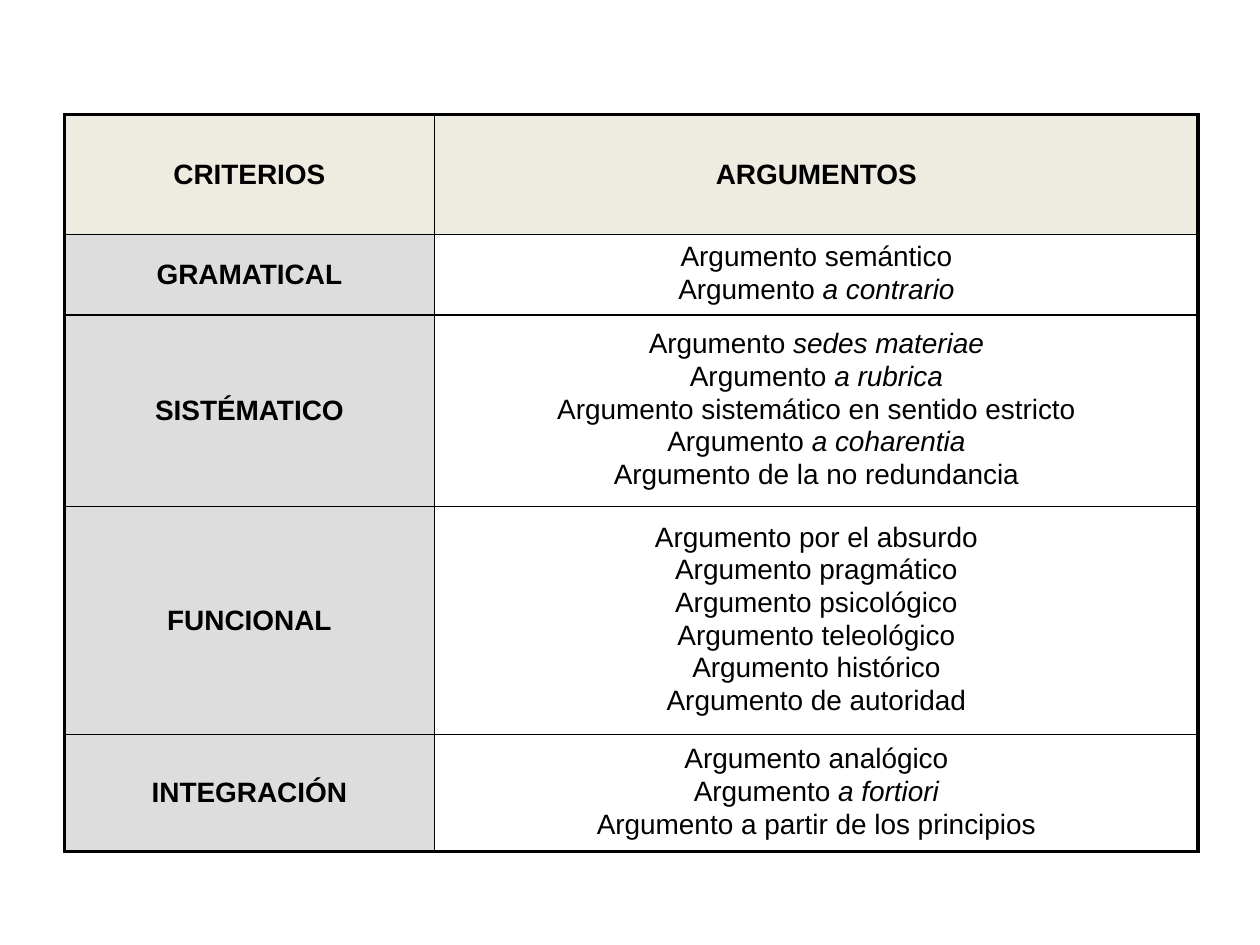
from dataclasses import dataclass

from lxml import etree
from pptx import Presentation
from pptx.dml.color import RGBColor
from pptx.enum.text import MSO_ANCHOR, PP_ALIGN
from pptx.oxml.ns import qn
from pptx.util import Inches, Pt

CENTER = PP_ALIGN.CENTER
MIDDLE = MSO_ANCHOR.MIDDLE
BLANK_LAYOUT = 6


@dataclass(frozen=True)
class Theme:
    font: str = "Arial"
    size: float = 16
    ink: str = "000000"
    header_fill: str = "EEECE1"
    label_fill: str = "DDDDDD"
    space_before: float = 2.65
    list_spacing: float = 0.9
    outer_line: float = 2.25
    inner_line: float = 1


class TablePage:
    def __init__(self, page, theme):
        self.page = page
        self.theme = theme

    def add_table(self, left, top, widths, heights):
        frame = self.page.shapes.add_table(
            len(heights), len(widths), Inches(left), Inches(top),
            Inches(sum(widths)), Inches(sum(heights)))
        table = frame.table
        for column, width in zip(table.columns, widths):
            column.width = Inches(width)
        for row, height in zip(table.rows, heights):
            row.height = Inches(height)
        return table

    def add_border(self, cell, side, width):
        properties = cell._tc.get_or_add_tcPr()
        line = etree.SubElement(properties, qn(f"a:ln{side}"), w=str(Pt(width)))
        fill = etree.SubElement(line, qn("a:solidFill"))
        etree.SubElement(fill, qn("a:srgbClr"), val=self.theme.ink)

    def frame_cells(self, table):
        """Heavy lines around the table, thin lines inside it."""
        last_row, last_column = len(table.rows) - 1, len(table.columns) - 1
        for r in range(last_row + 1):
            for c in range(last_column + 1):
                on_edge = {"L": c == 0, "R": c == last_column,
                           "T": r == 0, "B": r == last_row}
                for side, outer in on_edge.items():
                    width = self.theme.outer_line if outer else self.theme.inner_line
                    self.add_border(table.cell(r, c), side, width)

    def fill_cell(self, cell, lines, color=None, bold=False, spacing=None):
        """Each line is a plain text and an italic text, either may be empty."""
        cell.vertical_anchor = MIDDLE
        if color:
            cell.fill.solid()
            cell.fill.fore_color.rgb = RGBColor.from_string(color)
        else:
            cell.fill.background()
        for index, (plain, italic) in enumerate(lines):
            frame = cell.text_frame
            para = frame.add_paragraph() if index else frame.paragraphs[0]
            para.alignment = CENTER
            para.space_before = Pt(self.theme.space_before)
            if spacing:
                para.line_spacing = spacing
            for text, slanted in ((plain, False), (italic, True)):
                if text:
                    self.add_span(para, text, bold, slanted)

    def add_span(self, para, text, bold, italic):
        span = para.add_run()
        span.text = text
        font = span.font
        font.name, font.size = self.theme.font, Pt(self.theme.size)
        font.bold, font.italic = bold, italic
        font.color.rgb = RGBColor.from_string(self.theme.ink)


HEADERS = ["CRITERIOS", "ARGUMENTOS"]
ARGUMENTS = {
    "GRAMATICAL": [("Argumento semántico", ""), ("Argumento ", "a contrario")],
    "SISTÉMATICO": [
        ("Argumento ", "sedes materiae"),
        ("Argumento ", "a rubrica"),
        ("Argumento sistemático en sentido estricto", ""),
        ("Argumento ", "a coharentia"),
        ("Argumento de la no redundancia", ""),
    ],
    "FUNCIONAL": [
        ("Argumento por el absurdo", ""),
        ("Argumento pragmático", ""),
        ("Argumento psicológico", ""),
        ("Argumento teleológico", ""),
        ("Argumento histórico", ""),
        ("Argumento de autoridad", ""),
    ],
    "INTEGRACIÓN": [
        ("Argumento analógico", ""),
        ("Argumento ", "a fortiori"),
        ("Argumento a partir de los principios", ""),
    ],
}


def main():
    deck = Presentation()
    deck.slide_width, deck.slide_height = Inches(10), Inches(7.5)
    theme = Theme()
    page = TablePage(deck.slides.add_slide(deck.slide_layouts[BLANK_LAYOUT]), theme)

    # Table grid and borders
    table = page.add_table(0.51, 0.91, [2.94, 6.06], [0.95, 0.64, 1.52, 1.81, 0.93])
    page.frame_cells(table)

    # Header row
    for column, header in enumerate(HEADERS):
        page.fill_cell(table.cell(0, column), [(header, "")], theme.header_fill, bold=True)

    # One row for each criterion
    for row, (criterion, arguments) in enumerate(ARGUMENTS.items(), start=1):
        page.fill_cell(table.cell(row, 0), [(criterion, "")], theme.label_fill, bold=True)
        page.fill_cell(table.cell(row, 1), arguments, spacing=theme.list_spacing)

    deck.save("out.pptx")


if __name__ == "__main__":
    main()
